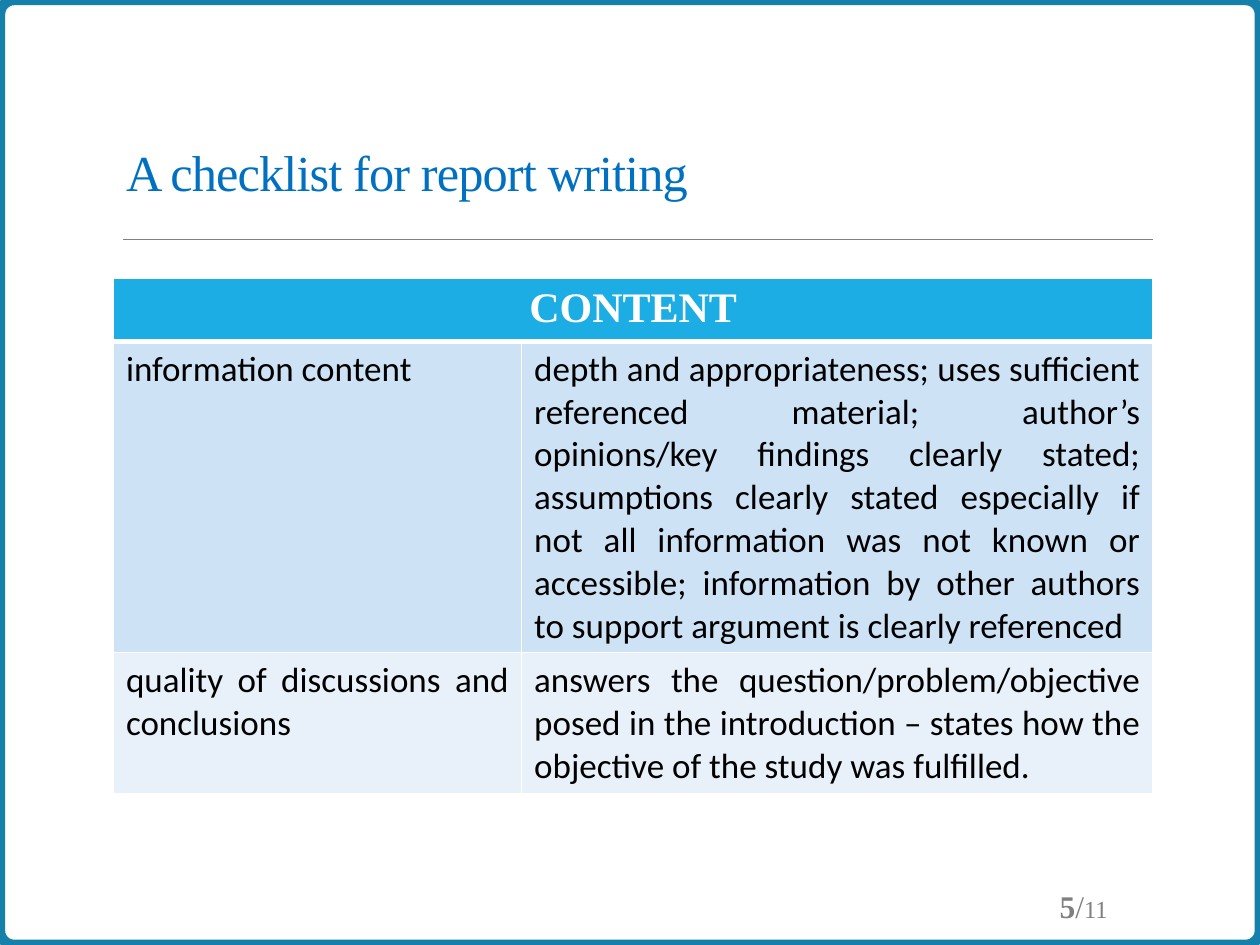
import pptx
import pptx.dml.color
import pptx.enum.shapes
import pptx.enum.text
import pptx.oxml
import pptx.oxml.ns
import pptx.util
from pptx.util import Inches

COLORS = {
    "frame": "1580A9", "rule": "808080", "title": "0070C0", "number": "808080",
    "header": "1CADE4", "band dark": "CDE3F5", "band light": "E8F1FA",
    "white": "FFFFFF", "black": "000000",
}
SERIF = "Times New Roman"
SANS = "Calibri"
ALIGN = pptx.enum.text.PP_ALIGN
ANCHOR = pptx.enum.text.MSO_ANCHOR

HEADING = "CONTENT"
CHECKLIST = [
    ("information content",
     "depth and appropriateness; uses sufficient referenced material; author’s "
     "opinions/key findings clearly stated; assumptions clearly stated especially "
     "if not all information was not known or accessible; information by other "
     "authors to support argument is clearly referenced"),
    ("quality of discussions and conclusions",
     "answers the question/problem/objective posed in the introduction – states "
     "how the objective of the study was fulfilled."),
]


def rgb(name):
    return pptx.dml.color.RGBColor.from_string(COLORS[name])


def format_run(run, typeface, size, color, bold=False):
    run.font.name = typeface
    run.font.size = pptx.util.Pt(size)
    run.font.color.rgb = rgb(color)
    run.font.bold = bold


def add_frame(slide, left, top, width, height):
    frame = slide.shapes.add_shape(
        pptx.enum.shapes.MSO_SHAPE.ROUNDED_RECTANGLE, left, top, width, height)
    frame.adjustments[0] = 0.015
    frame.shadow.inherit = False
    frame.fill.background()
    frame.line.color.rgb = rgb("frame")
    frame.line.width = pptx.util.Pt(6)


def add_title(slide, left, top, width, height):
    """Place the title at the bottom of its box, with a rule below it."""
    title = slide.shapes.title
    title.left, title.top, title.width, title.height = left, top, width, height
    text_frame = title.text_frame
    text_frame.text = "A checklist for report writing"
    text_frame.auto_size = pptx.enum.text.MSO_AUTO_SIZE.NONE
    text_frame.vertical_anchor = ANCHOR.BOTTOM
    paragraph = text_frame.paragraphs[0]
    paragraph.alignment = ALIGN.LEFT
    paragraph.line_spacing = 0.85
    run = paragraph.runs[0]
    format_run(run, SERIF, 28.8, "title")
    run.font._element.set("spc", "-50")

    rule_top = top + height + Inches(0.25)
    rule = slide.shapes.add_connector(
        pptx.enum.shapes.MSO_CONNECTOR.STRAIGHT,
        left + Inches(0.08), rule_top, left + width, rule_top)
    rule.line.color.rgb = rgb("rule")
    rule.line.width = pptx.util.Pt(0.5)
    rule._element.spPr.append(pptx.oxml.parse_xml(
        f'<a:effectLst {pptx.oxml.ns.nsdecls("a")}/>'))


def set_borders(cell, top=1, bottom=1):
    """Give a cell white borders, with widths in points."""
    properties = cell._tc.get_or_add_tcPr()
    for side, width in (("L", 1), ("R", 1), ("T", top), ("B", bottom)):
        properties.append(pptx.oxml.parse_xml(
            f'<a:ln{side} {pptx.oxml.ns.nsdecls("a")} w="{pptx.util.Pt(width)}">'
            f'<a:solidFill><a:srgbClr val="{COLORS["white"]}"/></a:solidFill>'
            f'</a:ln{side}>'))


def fill_cell(cell, text, fill, alignment, **font):
    cell.fill.solid()
    cell.fill.fore_color.rgb = rgb(fill)
    paragraph = cell.text_frame.paragraphs[0]
    paragraph.text = text
    paragraph.alignment = alignment
    format_run(paragraph.runs[0], **font)


def add_checklist(slide, left, top, width, height):
    """Draw a merged heading row above the rows of criteria."""
    table = slide.shapes.add_table(
        len(CHECKLIST) + 1, 2, left, top, width, height).table
    label_width = Inches(3.24)
    table.columns[0].width = label_width
    table.columns[1].width = width - label_width
    for row, row_height in zip(table.rows, (0.46, 2.47, 1.12)):
        row.height = Inches(row_height)

    for index, row in enumerate(table.rows):
        for cell in row.cells:
            set_borders(cell, top=3 if index == 1 else 1,
                        bottom=3 if index == 0 else 1)

    heading = table.cell(0, 0)
    heading.merge(table.cell(0, 1))
    fill_cell(heading, HEADING, "header", ALIGN.CENTER,
              typeface=SERIF, size=24, color="white", bold=True)
    for index, criteria in enumerate(CHECKLIST, start=1):
        band = "band dark" if index % 2 else "band light"
        for column, text in enumerate(criteria):
            fill_cell(table.cell(index, column), text, band, ALIGN.JUSTIFY,
                      typeface=SANS, size=20, color="black")


def add_page_number(slide, left, top, width, height):
    text_frame = slide.shapes.add_textbox(left, top, width, height).text_frame
    text_frame.word_wrap = True
    text_frame.vertical_anchor = ANCHOR.MIDDLE
    paragraph = text_frame.paragraphs[0]
    paragraph.alignment = ALIGN.RIGHT
    for text, size, bold in (("5", 18, True), ("/", 18, False), ("11", 14, False)):
        run = paragraph.add_run()
        run.text = text
        format_run(run, SERIF, size, "number", bold)


def main():
    presentation = pptx.Presentation()
    presentation.slide_width = Inches(10)
    presentation.slide_height = Inches(7.5)
    slide = presentation.slides.add_slide(presentation.slide_layouts[5])
    slide.background.fill.solid()
    slide.background.fill.fore_color.rgb = rgb("white")

    left, width = Inches(0.9), Inches(8.25)
    add_frame(slide, 0, 0, presentation.slide_width, presentation.slide_height)
    add_title(slide, left, Inches(0.77), width, Inches(0.88))
    add_page_number(slide, Inches(7.81), Inches(6.99), Inches(1.08), Inches(0.4))
    add_checklist(slide, left, Inches(2.21), width, Inches(4.05))
    presentation.save("out.pptx")


if __name__ == "__main__":
    main()
